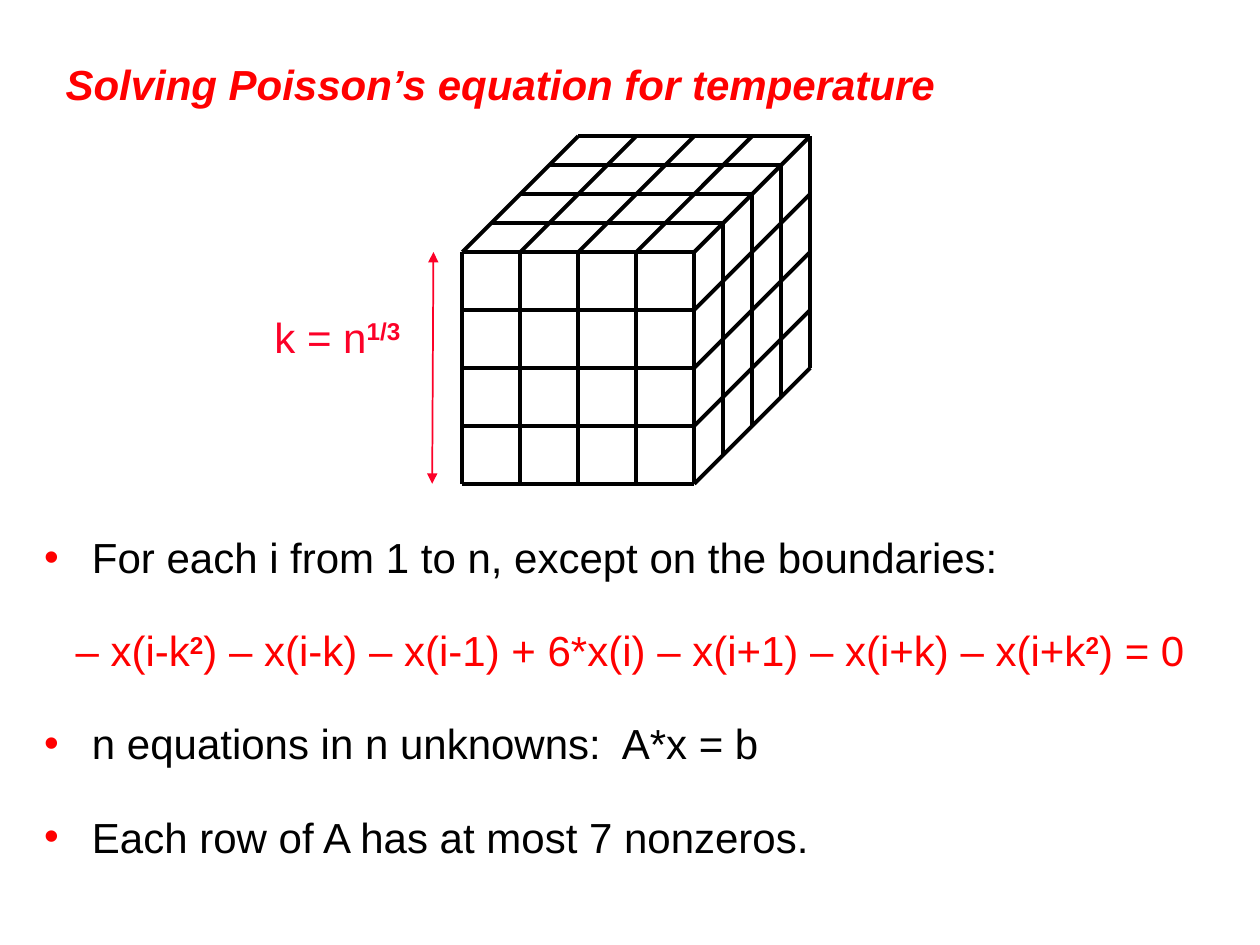
from lxml.etree import SubElement
from pptx import Presentation
from pptx.dml.color import RGBColor
from pptx.enum.shapes import MSO_CONNECTOR
from pptx.enum.text import MSO_ANCHOR, MSO_AUTO_SIZE, PP_ALIGN
from pptx.oxml.ns import qn
from pptx.util import Inches, Pt

COLORS = {"red": "FF0000", "crimson": "FC0128", "black": "000000"}
FONT, SIZE = "Arial", 24

TITLE = "Solving Poisson’s equation for temperature"
LABEL = [("k = n", False), ("1/3", True)]
BODY = [
    ("bullet", [("For each i from 1 to n, except on the boundaries:", False)]),
    ("equation", [
        ("– x(i-k", False), ("2", True),
        (") – x(i-k) – x(i-1) + 6*x(i) – x(i+1) – x(i+k) – x(i+k", False),
        ("2", True), (") = 0", False),
    ]),
    ("bullet", [("n equations in n unknowns:  A*x = b", False)]),
    ("bullet", [("Each row of A has at most 7 nonzeros.", False)]),
]

CELLS, CELL = 4, 0.46
RIGHT, DOWN, BACK = (CELL, 0), (0, CELL), (CELL / 2, -CELL / 2)
FRONT_CORNER = (3.67, 2)
SIDE_CORNER = (FRONT_CORNER[0] + CELLS * CELL, FRONT_CORNER[1])
LINE_FAMILIES = [
    (FRONT_CORNER, DOWN, RIGHT, 1),
    (FRONT_CORNER, RIGHT, DOWN, 0),
    (FRONT_CORNER, BACK, RIGHT, 0),
    (FRONT_CORNER, RIGHT, BACK, 0),
    (SIDE_CORNER, BACK, DOWN, 1),
    (SIDE_CORNER, DOWN, BACK, 1),
]


def place(shape, left, top, width, height):
    shape.left, shape.top = Inches(left), Inches(top)
    shape.width, shape.height = Inches(width), Inches(height)


def add_span(para, text, color, bold=False, italic=False, raised=False):
    span = para.add_run()
    span.text = text
    font = span.font
    font.name, font.size = FONT, Pt(SIZE)
    font.bold, font.italic = bold or raised, italic
    font.color.rgb = RGBColor.from_string(COLORS[color])
    if raised:
        span._r.get_or_add_rPr().set("baseline", "30000")


def move(point, step, count):
    return tuple(p + count * s for p, s in zip(point, step))


def add_line(group, start, end, color, width):
    ends = [Inches(value) for value in (*start, *end)]
    line = group.shapes.add_connector(MSO_CONNECTOR.STRAIGHT, *ends)
    line.line.color.rgb = RGBColor.from_string(COLORS[color])
    line.line.width = Pt(width)
    SubElement(line._element.spPr, qn("a:effectLst"))
    return line


def add_title(page):
    title = page.shapes.title
    place(title, 0.42, 0.33, 9.33, 0.67)
    frame = title.text_frame
    frame.auto_size = MSO_AUTO_SIZE.NONE
    frame.vertical_anchor = MSO_ANCHOR.MIDDLE
    para = frame.paragraphs[0]
    para.alignment = PP_ALIGN.LEFT
    add_span(para, TITLE, "red", bold=True, italic=True)


def add_cube(page):
    cube = page.shapes.add_group_shape()
    for corner, step, along, first in LINE_FAMILIES:
        for index in range(first, CELLS + 1):
            start = move(corner, step, index)
            add_line(cube, start, move(start, along, CELLS), "black", 2.25)


def add_dimension(page):
    dimension = page.shapes.add_group_shape()
    box = dimension.shapes.add_textbox(
        Inches(2.08), Inches(2.42), Inches(1.24), Inches(0.5))
    box.text_frame.word_wrap = False
    for text, raised in LABEL:
        add_span(box.text_frame.paragraphs[0], text, "crimson", raised=raised)
    bottom = FRONT_CORNER[1] + CELLS * CELL
    arrow = add_line(dimension, (3.43, bottom), (3.44, FRONT_CORNER[1]), "crimson", 1)
    for end in ("headEnd", "tailEnd"):
        SubElement(arrow.line._get_or_add_ln(), qn(f"a:{end}"), type="triangle")


def add_body(page):
    body = page.placeholders[1]
    place(body, 0.25, 4.17, 9.5, 3)
    frame = body.text_frame
    frame.auto_size = MSO_AUTO_SIZE.NONE
    for index, (kind, spans) in enumerate(BODY):
        para = frame.add_paragraph() if index else frame.paragraphs[0]
        para.space_before = Pt(24.4 if index else 4.8)
        properties = para._p.get_or_add_pPr()
        properties.set("marL", str(Inches(0.38)))
        properties.set("indent", str(Inches(-0.38)))
        if kind == "bullet":
            para.alignment = PP_ALIGN.LEFT
            bullet_color = SubElement(properties, qn("a:buClr"))
            SubElement(bullet_color, qn("a:srgbClr"), val=COLORS["red"])
            SubElement(properties, qn("a:buChar"), char="•")
        else:
            para.alignment = PP_ALIGN.CENTER
            SubElement(properties, qn("a:buNone"))
        color = "black" if kind == "bullet" else "red"
        for text, raised in spans:
            add_span(para, text, color, raised=raised)


def main():
    deck = Presentation()
    deck.slide_width, deck.slide_height = Inches(10), Inches(7.5)
    page = deck.slides.add_slide(deck.slide_layouts[1])
    add_title(page)
    add_cube(page)
    add_dimension(page)
    add_body(page)
    deck.save("out.pptx")


if __name__ == "__main__":
    main()
